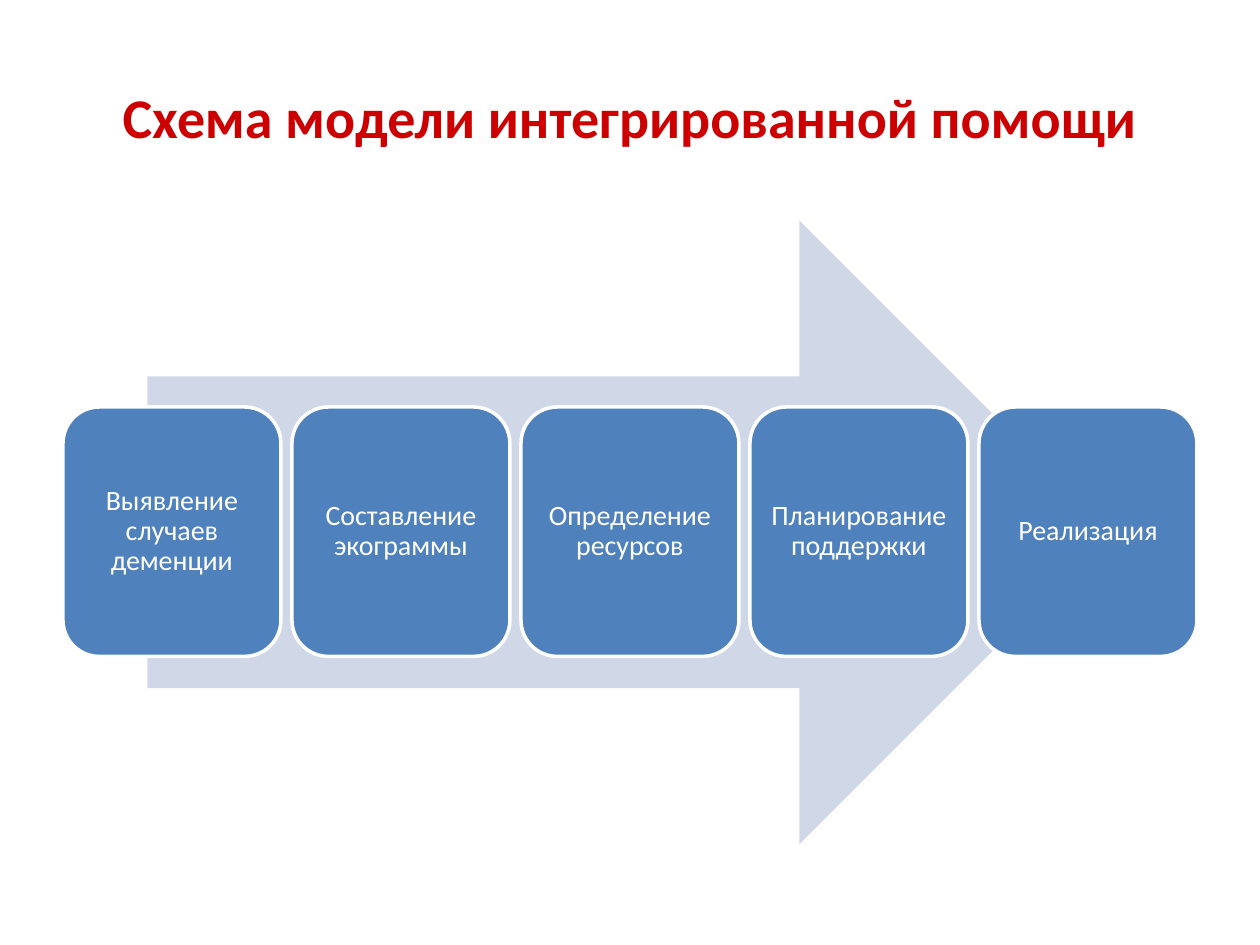
from pptx import Presentation
from pptx.dml.color import RGBColor
from pptx.enum.shapes import MSO_SHAPE
from pptx.enum.text import MSO_ANCHOR, PP_ALIGN
from pptx.util import Inches, Pt


def rgb(hex_color):
    return RGBColor.from_string(hex_color)


def write(frame, text, size, color, bold=False, spacing=1.0, inset=0.1):
    frame.word_wrap = True
    frame.vertical_anchor = MSO_ANCHOR.MIDDLE
    frame.margin_left = frame.margin_right = Inches(inset)
    frame.margin_top = frame.margin_bottom = Inches(inset / 2)
    paragraph = frame.paragraphs[0]
    paragraph.alignment = PP_ALIGN.CENTER
    paragraph.line_spacing = spacing
    run = paragraph.add_run()
    run.text = text
    run.font.name = "Calibri"
    run.font.size = Pt(size)
    run.font.bold = bold
    run.font.color.rgb = rgb(color)


class CareModelSlide:
    heading_color = "CC0000"
    arrow_color = "D0D8E8"
    step_color = "4F81BD"
    light = "FFFFFF"

    def __init__(self, presentation):
        self.slide = presentation.slides.add_slide(presentation.slide_layouts[5])

    def title(self, text, left, top, width, height):
        heading = self.slide.shapes.title
        heading.left, heading.top = Inches(left), Inches(top)
        heading.width, heading.height = Inches(width), Inches(height)
        write(heading.text_frame, text, size=32, color=self.heading_color, bold=True)

    def block(self, preset, left, top, width, height, fill):
        body = self.slide.shapes.add_shape(
            preset, Inches(left), Inches(top), Inches(width), Inches(height)
        )
        body.shadow.inherit = False
        body.fill.solid()
        body.fill.fore_color.rgb = rgb(fill)
        body.line.fill.background()
        return body

    def arrow(self, left, top, width, height):
        self.block(MSO_SHAPE.RIGHT_ARROW, left, top, width, height, self.arrow_color)

    def step(self, text, left, top, width, height):
        card = self.block(
            MSO_SHAPE.ROUNDED_RECTANGLE, left, top, width, height, self.step_color
        )
        card.line.color.rgb = rgb(self.light)
        card.line.width = Pt(2)
        write(card.text_frame, text, size=16, color=self.light, spacing=0.9, inset=0.02)


def main():
    presentation = Presentation()
    presentation.slide_width = Inches(10)
    presentation.slide_height = Inches(7.5)

    care_model = CareModelSlide(presentation)
    care_model.title("Схема модели интегрированной помощи", 0.5, 0.3, 9, 1.25)
    care_model.arrow(1.17, 1.75, 7.65, 4.95)

    steps = [
        "Выявление случаев деменции",
        "Составление экограммы",
        "Определение ресурсов",
        "Планирование поддержки",
        "Реализация",
    ]
    margin, step_width = 0.5, 1.73
    pitch = (10 - 2 * margin - step_width) / (len(steps) - 1)
    for index, step in enumerate(steps):
        care_model.step(step, margin + index * pitch, 3.23, step_width, 1.98)

    presentation.save("out.pptx")


if __name__ == "__main__":
    main()
